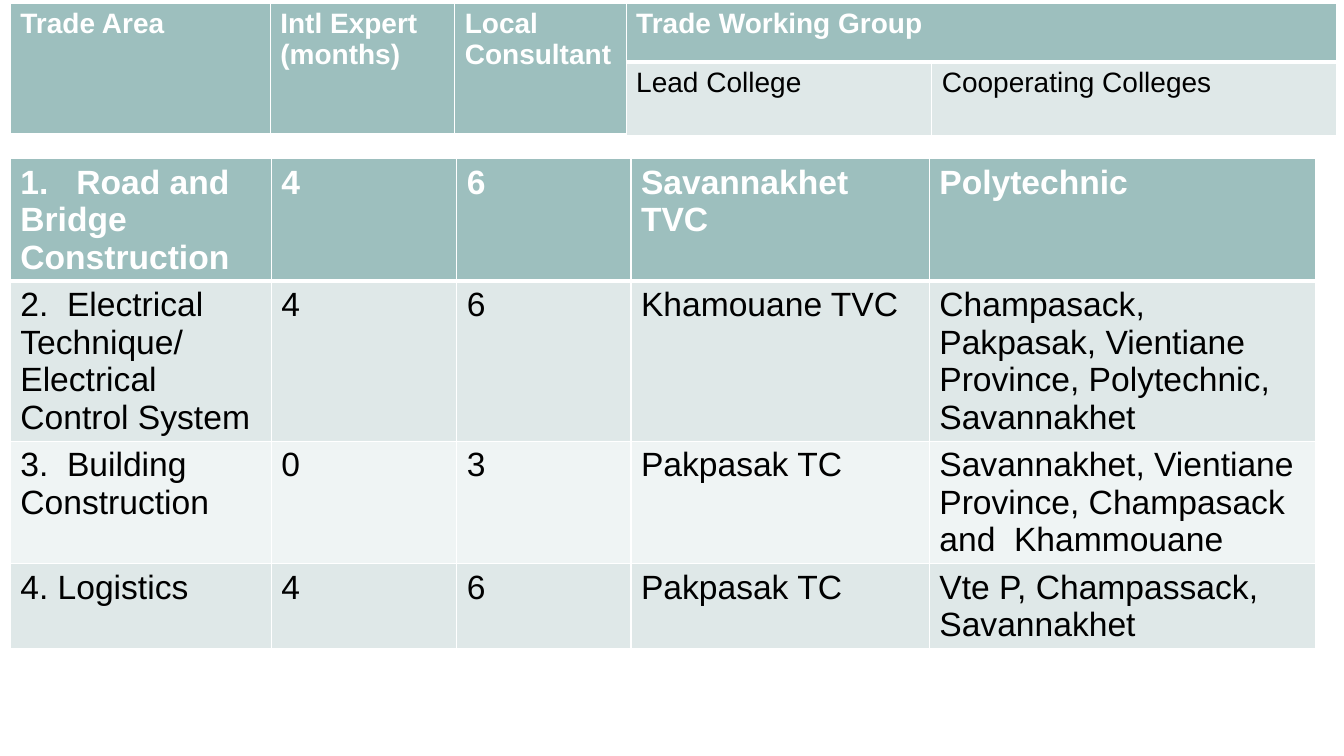
from lxml.etree import SubElement as Sub
from pptx import Presentation
from pptx.dml.color import RGBColor
from pptx.oxml.ns import qn
from pptx.util import Cm, Pt

TEAL, PALE, LIGHT, WHITE, BLACK = "9DBFBE", "DFE8E8", "EFF4F4", "FFFFFF", "000000"
color = RGBColor.from_string


def write(cell, text, size=24, bold=False, ink=BLACK, fill=PALE, base=1):
    """Fill a cell with text, white borders and a ground colour."""
    props = cell._tc.get_or_add_tcPr()
    for side, width in zip("LRTB", (1, 1, 1, base)):
        line = Sub(props, qn(f"a:ln{side}"), w=str(Pt(width)))
        Sub(Sub(line, qn("a:solidFill")), qn("a:srgbClr"), val=WHITE)
    cell.fill.solid()
    cell.fill.fore_color.rgb = color(fill)
    cell.text = text
    for para in cell.text_frame.paragraphs:
        para.font.name = "Arial"
        para.font.size = Pt(size)
        para.font.bold = bold
        para.font.color.rgb = color(ink)


def grid(top, widths, heights):
    """Add a plain table with the given column widths and row heights."""
    frame = slide.shapes.add_table(len(heights), len(widths), Cm(0.26), Cm(top),
                                   Cm(sum(widths)), Cm(sum(heights)))
    table = frame.table
    table.first_row = True
    table.horz_banding = False
    for col, width in zip(table.columns, widths):
        col.width = Cm(width)
    for row, height in zip(table.rows, heights):
        row.height = Cm(height)
    return table


deck = Presentation()
deck.slide_width, deck.slide_height = Cm(33.87), Cm(19.05)
slide = deck.slides.add_slide(deck.slide_layouts[6])

# Trade areas
trades = [
    ("1.   Road and Bridge Construction", "4", "6", "Savannakhet TVC", "Polytechnic"),
    ("2.  Electrical Technique/\nElectrical Control System", "4", "6", "Khamouane TVC",
     "Champasack, Pakpasak, Vientiane Province, Polytechnic, Savannakhet"),
    ("3.  Building Construction", "0", "3", "Pakpasak TC",
     "Savannakhet, Vientiane Province, Champasack and  Khammouane"),
    ("4. Logistics", "4", "6", "Pakpasak TC", "Vte P, Champassack, Savannakhet"),
]
body = grid(4, (6.58, 4.67, 4.39, 7.52, 9.73), (3.05, 4.03, 3.08, 2.13))
for r, trade in enumerate(trades):
    if r == 0:
        look = dict(bold=True, ink=WHITE, fill=TEAL, base=3)
    else:
        look = dict(fill=PALE if r % 2 else LIGHT)
    for c, text in enumerate(trade):
        write(body.cell(r, c), text, **look)

# Column headings
heads = [
    ("Trade Area", "Intl Expert (months)", "Local Consultant", "Trade Working Group", ""),
    ("", "", "", "Lead College", "Cooperating Colleges"),
]
top = grid(0.08, (6.55, 4.65, 4.32, 7.7, 10.21), (1.49, 1.84))
for r, names in enumerate(heads):
    for c, text in enumerate(names):
        if r == 0 or c < 3:
            look = dict(bold=True, ink=WHITE, fill=TEAL, base=3)
        else:
            look = dict(fill=PALE)
        write(top.cell(r, c), text, size=20, **look)
for c in range(3):
    top.cell(0, c).merge(top.cell(1, c))
top.cell(0, 3).merge(top.cell(0, 4))

deck.save("out.pptx")
